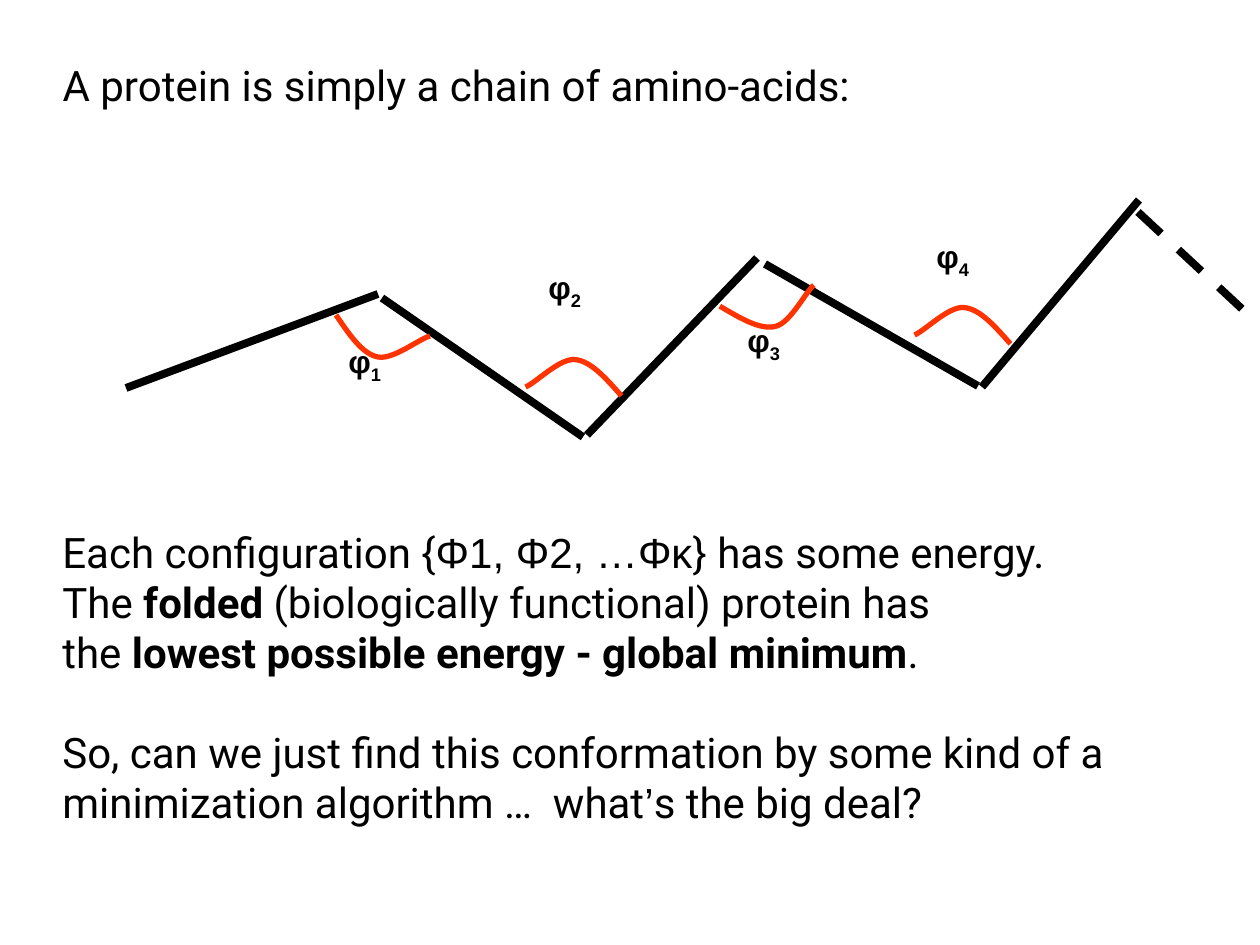
from dataclasses import dataclass
from typing import NamedTuple

from lxml import etree
from pptx import Presentation
from pptx import util as u
from pptx.dml.color import RGBColor
from pptx.enum import dml, shapes, text
from pptx.oxml.ns import qn

PX = 914400 / 126
BLACK, RED = "000000", "FF3300"


class Run(NamedTuple):
    text: str
    font: str = "Roboto"
    bold: bool = False
    base: int = 0


class Bond(NamedTuple):
    x1: int
    y1: int
    x2: int
    y2: int
    dash: bool = False


@dataclass
class Angle:
    num: str
    arc: tuple[int, int]
    turn: float
    label: tuple[int, int]


BONDS = [
    Bond(126, 388, 378, 294),
    Bond(382, 298, 583, 437),
    Bond(587, 435, 757, 258),
    Bond(765, 264, 978, 386),
    Bond(982, 387, 1139, 200),
    Bond(1138, 212, 1255, 321, dash=True),
]
ANGLES = [
    Angle("1", (336, 315), 0, (336, 336)),
    Angle("2", (525, 357), 172.7, (536, 262)),
    Angle("3", (725, 284), 334.8, (735, 315)),
    Angle("4", (914, 305), 172.7, (924, 231)),
]
# Two Bezier pieces, three points each, from a start at 0, 0
ARC = [(13, 19), (26, 39), (42, 42), (57, 45), (83, 24), (94, 21)]

TITLE = [[Run("A protein is simply a chain of amino-acids:")]]
ENERGY = [
    [Run("Each configuration {"), Run("Φ1, Φ2, …Φκ", "Arial"),
     Run("} has some energy.")],
    [Run("The "), Run("folded", bold=True),
     Run(" (biologically functional) protein has")],
    [Run("the "), Run("lowest possible energy - global minimum", bold=True),
     Run(".")],
    [Run("So, can we just find this conformation by some kind of a")],
    [Run("minimization algorithm …  what"), Run("’", "Arial"),
     Run("s the big deal?")],
]


def px(n: float) -> u.Emu:
    return u.Emu(round(n * PX))


def color(code: str) -> RGBColor:
    return RGBColor.from_string(code)


def place(shape, x: int, y: int, w: int, h: int) -> None:
    shape.left, shape.top, shape.width, shape.height = map(px, (x, y, w, h))


def write(shape, paras: list[list[Run]], *, size: int = 24,
          ink: str = BLACK, gaps: dict[int, int] | None = None) -> None:
    frame = shape.text_frame
    frame.word_wrap = False
    frame.auto_size = text.MSO_AUTO_SIZE.SHAPE_TO_FIT_TEXT
    frame.vertical_anchor = text.MSO_ANCHOR.TOP
    for i, runs in enumerate(paras):
        para = frame.add_paragraph() if i else frame.paragraphs[0]
        para.alignment = text.PP_ALIGN.LEFT
        para.space_before = u.Pt((gaps or {}).get(i, 0))
        for item in runs:
            run = para.add_run()
            run.text = item.text
            font = run.font
            font.name, font.size, font.bold = item.font, u.Pt(size), item.bold
            font.color.rgb = color(ink)
            if item.base:
                run._r.get_or_add_rPr().set("baseline", str(item.base * 1000))


def draw_bond(group, bond: Bond) -> None:
    line = group.shapes.add_connector(
        shapes.MSO_CONNECTOR.STRAIGHT, *map(px, bond[:4]))
    line.line.color.rgb = color(BLACK)
    line.line.width = u.Pt(4.5)
    if bond.dash:
        line.line.dash_style = dml.MSO_LINE.DASH
    etree.SubElement(line._element.spPr, qn("a:effectLst"))


def draw_arc(group, angle: Angle) -> None:
    pen = group.shapes.build_freeform(0, 0, scale=PX)
    pen.add_line_segments(ARC, close=False)
    arc = pen.convert_to_shape(*map(px, angle.arc))
    arc.rotation = angle.turn
    arc.shadow.inherit = False
    arc.fill.background()
    arc.line.color.rgb = color(RED)
    arc.line.width = u.Pt(3)
    # Turn each three straight steps into one Bezier piece
    route = next(arc._element.iter(qn("a:path")))
    steps = route.findall(qn("a:lnTo"))
    for i in range(0, len(steps), 3):
        curve = etree.SubElement(route, qn("a:cubicBezTo"))
        for step in steps[i:i + 3]:
            curve.append(step[0])
            route.remove(step)


def draw_label(group, angle: Angle) -> None:
    box = group.shapes.add_textbox(*map(px, (*angle.label, 73, 79)))
    write(box, [[Run("φ", "Arial", True), Run(angle.num, "Arial", True, -25)]],
          size=18)


def main() -> None:
    deck = Presentation()
    deck.slide_width, deck.slide_height = px(1260), px(945)
    slide = deck.slides.add_slide(deck.slide_layouts[5])

    # Chain of bonds with its angles
    *solid, tail = BONDS
    chain = slide.shapes.add_group_shape()
    for bond in solid:
        draw_bond(chain, bond)
    for angle in ANGLES:
        draw_arc(chain, angle)
    for angle in ANGLES:
        draw_label(chain, angle)
    draw_bond(chain, tail)

    # Title and body text
    title = slide.shapes.title
    place(title, 50, 53, 886, 63)
    write(title, TITLE)
    body = slide.shapes.add_textbox(*map(px, (50, 520, 1157, 318)))
    write(body, ENERGY, gaps={3: 28})

    deck.save("out.pptx")


if __name__ == "__main__":
    main()
